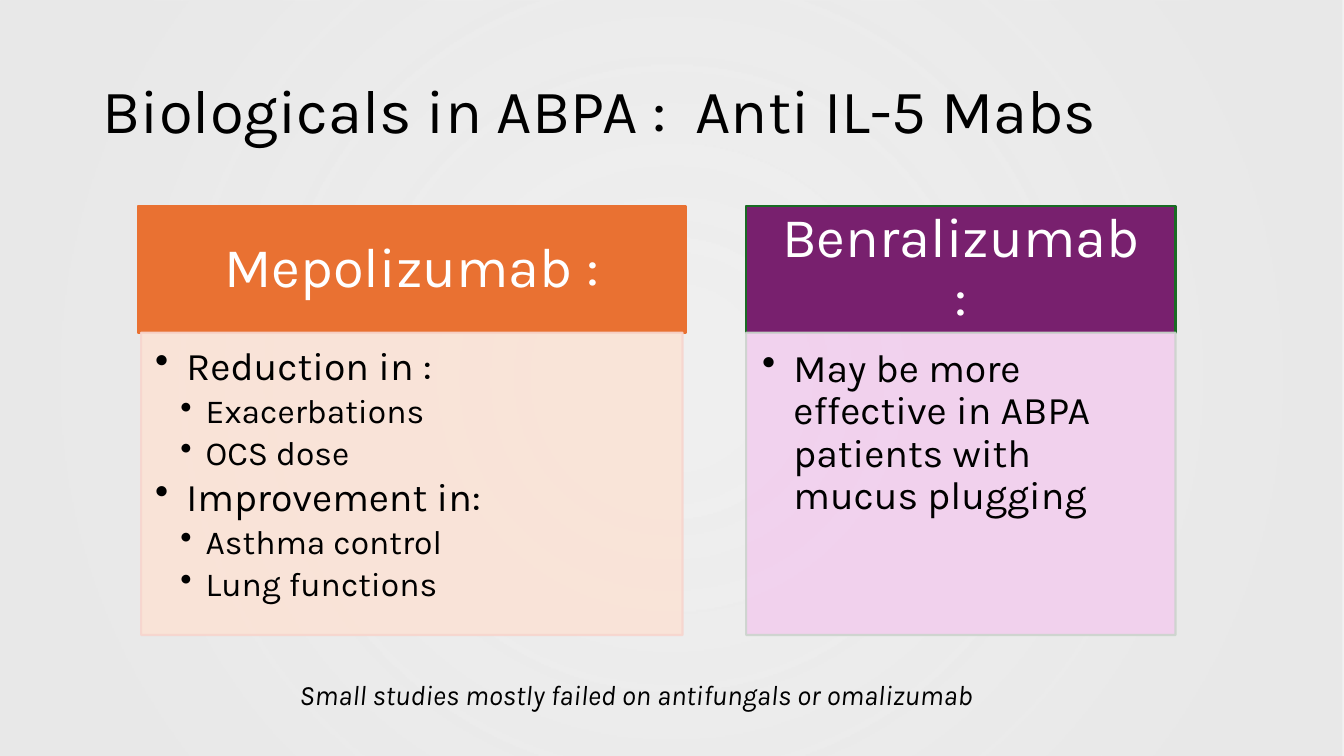
from lxml import etree
from pptx import Presentation
from pptx.dml.color import RGBColor
from pptx.enum.shapes import MSO_SHAPE
from pptx.enum.text import MSO_ANCHOR, MSO_AUTO_SIZE, PP_ALIGN
from pptx.oxml import parse_xml
from pptx.oxml.ns import nsdecls, qn
from pptx.util import Inches, Pt

RECT = MSO_SHAPE.RECTANGLE
MIDDLE, TOP = MSO_ANCHOR.MIDDLE, MSO_ANCHOR.TOP
LEFT, CENTER = PP_ALIGN.LEFT, PP_ALIGN.CENTER
GROW = MSO_AUTO_SIZE.SHAPE_TO_FIT_TEXT

BLACK = RGBColor(0, 0, 0)
WHITE = RGBColor(0xFF, 0xFF, 0xFF)
GREY = RGBColor(0xE8, 0xE8, 0xE8)
ORANGE = RGBColor(0xE9, 0x71, 0x32)
PEACH = RGBColor(0xFB, 0xE3, 0xD6)
ROSE = RGBColor(0xF7, 0xD5, 0xCE)
PURPLE = RGBColor(0x78, 0x20, 0x6E)
GREEN = RGBColor(0x19, 0x6B, 0x24)
PINK = RGBColor(0xF2, 0xCF, 0xEE)
SILVER = RGBColor(0xCC, 0xD4, 0xCD)

FONT = "Karla"
TITLE = "Biologicals in ABPA :  Anti IL-5 Mabs"
NOTE = "Small studies mostly failed on antifungals or omalizumab"
# Each card: head, (level, text) points, left, width, body inset, pad, colours
CARDS = [
    dict(head="Mepolizumab :", left=1.37, width=5.43, inset=0.03,
         pad=(0.14, 0.14, 0.19, 0.21),
         head_look=(ORANGE, ORANGE), body_look=(PEACH, ROSE),
         points=[(0, "Reduction in :"), (1, "Exacerbations"),
                 (1, "OCS dose"), (0, "Improvement in:"),
                 (1, "Asthma control"), (1, "Lung functions")]),
    dict(head="Benralizumab :", left=7.4, width=4.26, inset=0,
         pad=(0.16, 0.16, 0.22, 0.24),
         head_look=(PURPLE, GREEN), body_look=(PINK, SILVER),
         points=[(0, "May be more effective in ABPA patients "
                     "with mucus plugging")]),
]
LEVELS = [(28, 0.31, 0.31), (24, 0.5, 0.25)]  # size, margin, hanging indent
WIDE, HIGH = 13.33, 7.5
CARD_TOP, HEAD_HIGH, BODY_HIGH = 2.04, 1.26, 3
HEAD_PAD = (0.31, 0.18, 0.31, 0.18)
TEXT_PAD = (0.1, 0.05, 0.1, 0.05)


def fade(fill, share):
    """Make a solid fill opaque by share percent."""
    color = fill._xPr.find(qn("a:solidFill"))[0]
    etree.SubElement(color, qn("a:alpha")).set("val", str(share * 1000))


def add_box(slide, place, look, opaque=100):
    box = slide.shapes.add_shape(RECT, *map(Inches, place))
    box.shadow.inherit = False
    fill, line = look
    box.fill.solid()
    box.fill.fore_color.rgb = fill
    box.line.color.rgb = line
    box.line.width = Pt(1.5)
    if opaque < 100:
        fade(box.fill, opaque)
        fade(box.line.fill, opaque)
    return box


def set_frame(shape, pad, anchor):
    frame = shape.text_frame
    frame.word_wrap = True
    frame.vertical_anchor = anchor
    (frame.margin_left, frame.margin_top,
     frame.margin_right, frame.margin_bottom) = map(Inches, pad)
    return frame


def write(para, text, size, color, align=LEFT, after=0, spacing=0.9):
    para.text = text
    para.alignment = align
    para.line_spacing = spacing
    para.space_after = Pt(after)
    para.font.name = FONT
    para.font.size = Pt(size)
    para.font.color.rgb = color


def add_bullet(para, margin, hang):
    props = para._p.get_or_add_pPr()
    props.set("marL", str(Inches(margin)))
    props.set("indent", str(-Inches(hang)))
    mark = parse_xml(f'<a:buChar {nsdecls("a")} char="•"/>')
    props.insert_element_before(mark, "a:tabLst", "a:defRPr", "a:extLst")


def add_glow(slide):
    """Cover the slide with a round gradient, clearer in the middle."""
    glow = add_box(slide, (0, 0, WIDE, HIGH), (GREY, GREY))
    glow.line.fill.background()
    stops = "".join(
        f'<a:gs pos="{pos}000"><a:srgbClr val="{GREY}">'
        f'<a:alpha val="{share}000"/></a:srgbClr></a:gs>'
        for pos, share in [(10, 68), (85, 97)])
    grad = parse_xml(
        f'<a:gradFill {nsdecls("a")}><a:gsLst>{stops}</a:gsLst>'
        '<a:path path="circle"><a:fillToRect l="50000" t="50000" '
        'r="50000" b="50000"/></a:path></a:gradFill>')
    props = glow._element.spPr
    props.replace(props.find(qn("a:solidFill")), grad)


def add_text(slide, place, anchor):
    box = slide.shapes.add_textbox(*map(Inches, place))
    return set_frame(box, TEXT_PAD, anchor)


def add_card(slide, card):
    left, width, inset = card["left"], card["width"], card["inset"]
    head = add_box(slide, (left, CARD_TOP, width, HEAD_HIGH),
                   card["head_look"])
    frame = set_frame(head, HEAD_PAD, MIDDLE)
    write(frame.paragraphs[0], card["head"], 40, WHITE, CENTER)

    place = (left + inset, CARD_TOP + HEAD_HIGH, width - 2 * inset, BODY_HIGH)
    body = add_box(slide, place, card["body_look"], 90)
    frame = set_frame(body, card["pad"], TOP)
    for i, (level, text) in enumerate(card["points"]):
        para = frame.add_paragraph() if i else frame.paragraphs[0]
        size, margin, hang = LEVELS[level]
        para.level = level
        write(para, text, size, BLACK, after=0.15 * size)
        add_bullet(para, margin, hang)


def main():
    deck = Presentation()
    deck.slide_width, deck.slide_height = Inches(WIDE), Inches(HIGH)
    slide = deck.slides.add_slide(deck.slide_layouts[6])
    add_glow(slide)
    title = add_text(slide, (0.92, 0.4, 11.5, 1.45), MIDDLE)
    write(title.paragraphs[0], TITLE, 44, BLACK)
    for card in CARDS:
        add_card(slide, card)
    note = add_text(slide, (2.87, 6.67, 7.58, 0.44), TOP)
    note.auto_size = GROW
    write(note.paragraphs[0], NOTE, 20, BLACK, spacing=1.0)
    note.paragraphs[0].font.italic = True
    deck.save("out.pptx")


if __name__ == "__main__":
    main()
